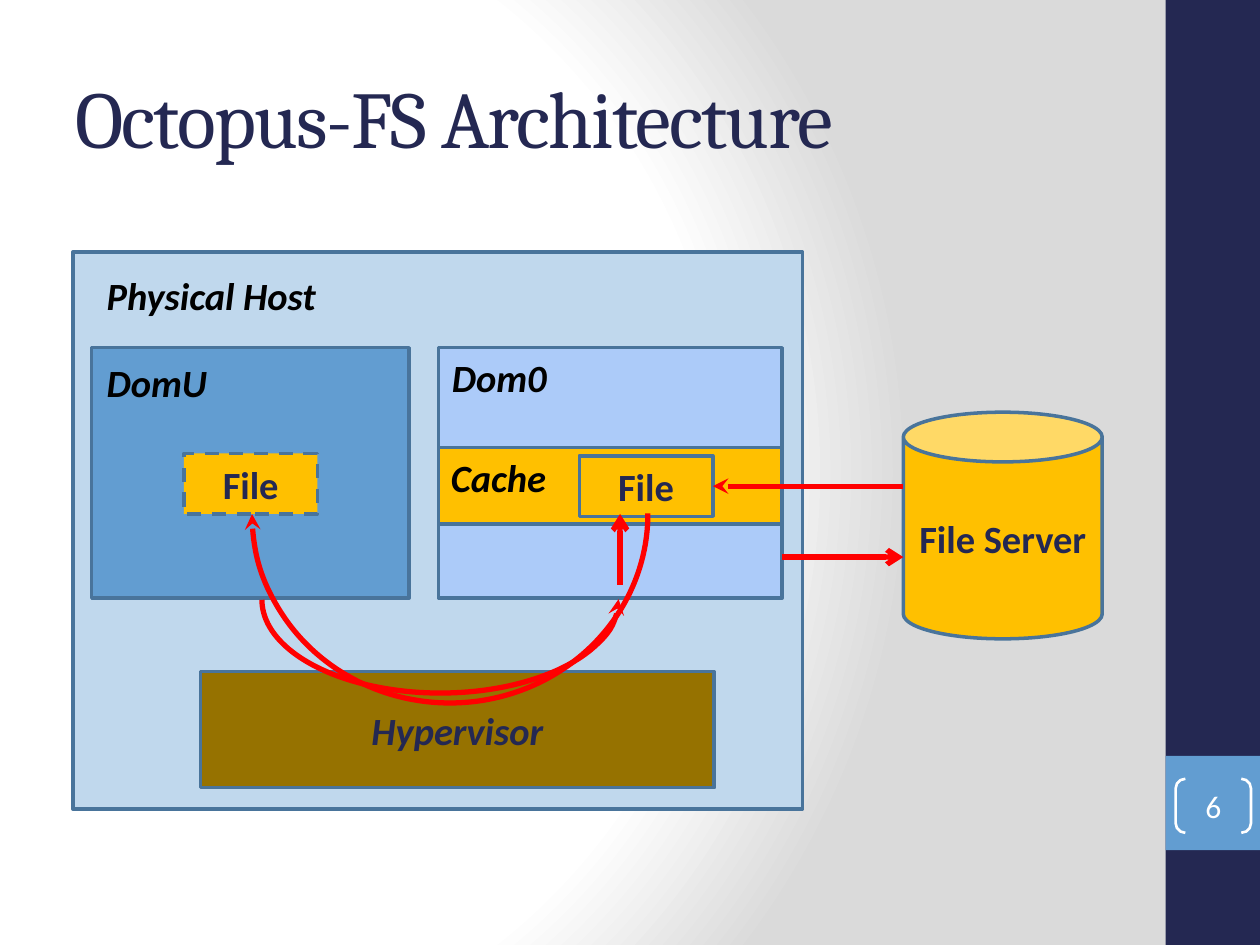
from pptx import Presentation
from pptx import util as u
from pptx.dml.color import RGBColor
from pptx.enum import dml, shapes, text
from pptx.oxml import parse_xml
from pptx.oxml.ns import nsdecls, qn

NAVY, BLUE, GOLD, EDGE, RED = "242852", "629DD1", "FFC000", "49749B", "FF0000"
WHITE, BLACK = "FFFFFF", "000000"
KIND = shapes.MSO_SHAPE
SLIDE_SIZE = (25.4, 19.05)

# Text formats
TITLE = dict(name="Cambria", size=u.Pt(46), color=NAVY)
LABEL = dict(name="Calibri", size=u.Pt(22), bold=True, italic=True, color=BLACK)
HYPERVISOR = dict(LABEL, color=NAVY)
BOX = dict(HYPERVISOR, italic=False)
NUMBER = dict(name="Calibri", size=u.Pt(18), color=WHITE)

# Shared measures in cm
BAR_LEFT, BAR_WIDTH = 23.5, 1.9
DOMAIN_TOP, DOMAIN_HEIGHT = 7.01, 5.05
DOM0_LEFT, DOM0_WIDTH = 8.84, 6.93
DOM0_RIGHT = DOM0_LEFT + DOM0_WIDTH
SERVER_LEFT = 18.21
FILE_SIZE = (2.69, 1.22)
LABEL_HEIGHT = 1.19

# Name, kind, (left, top, width, height), fill, line, text, format
PARTS = [
    ("side bar", KIND.RECTANGLE, (BAR_LEFT, 0, BAR_WIDTH, 19.05), NAVY, None, "", BOX),
    ("number tile", KIND.RECTANGLE, (BAR_LEFT, 15.24, BAR_WIDTH, BAR_WIDTH), BLUE, None, "", BOX),
    ("physical host", KIND.RECTANGLE, (1.47, 5.08, 14.71, 11.23), "C0D8ED", EDGE, "", BOX),
    ("Dom0", KIND.RECTANGLE, (DOM0_LEFT, DOMAIN_TOP, DOM0_WIDTH, DOMAIN_HEIGHT),
     "ACCBF9", EDGE, "", BOX),
    ("DomU", KIND.RECTANGLE, (1.85, DOMAIN_TOP, 6.4, DOMAIN_HEIGHT), BLUE, EDGE, "", BOX),
    ("hypervisor", KIND.RECTANGLE, (4.04, 13.54, 10.36, 2.34),
     "967200", EDGE, "Hypervisor", HYPERVISOR),
    ("file server", KIND.CAN, (SERVER_LEFT, 8.31, 4.01, 4.57), GOLD, EDGE, "File Server", BOX),
    ("cache", KIND.RECTANGLE, (DOM0_LEFT, 9.02, DOM0_WIDTH, 1.55), GOLD, EDGE, "", BOX),
    ("DomU file", KIND.RECTANGLE, (3.71, 9.14, *FILE_SIZE), GOLD, EDGE, "File", BOX),
    ("cached file", KIND.RECTANGLE, (11.68, 9.19, *FILE_SIZE), GOLD, EDGE, "File", BOX),
    ("page number", KIND.DOUBLE_BRACKET, (23.7, 15.7, 1.52, 1.09), None, WHITE, "6", NUMBER),
]
LABELS = [
    ("Physical Host", (1.9, 5.36, 6.3)),
    ("DomU", (1.9, 7.11, 3.18)),
    ("Dom0", (8.86, DOMAIN_TOP, 3.18)),
    ("Cache", (DOM0_LEFT, 9.02, 2.54)),
]
# Start, end, arrow end, arrow type, part joined at the start
ARROWS = [
    ((12.5, 11.79), (12.5, 10.36), "tailEnd", "arrow", None),
    ((DOM0_RIGHT, 11.23), (SERVER_LEFT, 11.23), "tailEnd", "arrow", None),
    ((14.37, 9.8), (SERVER_LEFT, 9.8), "headEnd", "stealth", "cached file"),
]
# Box of the whole ellipse, arrow end
ARCS = [
    ((5.28, 10.21, 7.19, 3.76), "headEnd"),
    ((5.08, 6.55, 7.98, 7.62), "tailEnd"),
]


def cm(values):
    return [u.Cm(value) for value in values]


def rgb(value):
    return RGBColor.from_string(value)


def write(shape, words, style, align, anchor):
    frame = shape.text_frame
    frame.word_wrap = True
    frame.vertical_anchor = anchor
    paragraph = frame.paragraphs[0]
    paragraph.alignment = align
    run = paragraph.add_run()
    run.text = words
    for key, value in style.items():
        if key == "color":
            run.font.color.rgb = rgb(value)
        else:
            setattr(run.font, key, value)
    return run


def set_line(shape, color, width):
    shape.line.color.rgb = rgb(color)
    shape.line.width = u.Pt(width)


def add_part(slide, kind, box, fill, line, width=2):
    shape = slide.shapes.add_shape(kind, *cm(box))
    shape.shadow.inherit = False
    if fill:
        shape.fill.solid()
        shape.fill.fore_color.rgb = rgb(fill)
    else:
        shape.fill.background()
    if line:
        set_line(shape, line, width)
    else:
        shape.line.fill.background()
    return shape


def add_head(shape, end, kind):
    shape.line._get_or_add_ln().append(
        parse_xml(f'<a:{end} {nsdecls("a")} type="{kind}"/>'))


def set_background(slide):
    slide.background.fill.gradient()
    old = slide.element.find(".//" + qn("a:gradFill"))
    stops = "".join(
        f'<a:gs pos="{place * 1000}"><a:srgbClr val="{color}"/></a:gs>'
        for place, color in [(0, WHITE), (75, WHITE), (100, "DADADA")])
    old.getparent().replace(old, parse_xml(
        f'<a:gradFill {nsdecls("a")} rotWithShape="1"><a:gsLst>{stops}</a:gsLst>'
        '<a:path path="circle"><a:fillToRect l="20000" t="50000" r="100000" b="50000"/>'
        '</a:path></a:gradFill>'))


def main():
    presentation = Presentation()
    presentation.slide_width, presentation.slide_height = cm(SLIDE_SIZE)
    slide = presentation.slides.add_slide(presentation.slide_layouts[6])
    set_background(slide)

    # Title
    title = slide.shapes.add_textbox(*cm((1.27, 0.76, 21.16, 3.18)))
    run = write(title, "Octopus-FS Architecture", TITLE,
                text.PP_ALIGN.LEFT, text.MSO_ANCHOR.MIDDLE)
    run.font._element.set("spc", "-100")

    # Boxes, file server and page number
    parts = {}
    for name, kind, box, fill, line, words, style in PARTS:
        parts[name] = shape = add_part(slide, kind, box, fill, line)
        if words:
            write(shape, words, style, text.PP_ALIGN.CENTER, text.MSO_ANCHOR.MIDDLE)
    parts["DomU file"].line.dash_style = dml.MSO_LINE.DASH
    number = parts["page number"]
    number.line.width = u.Pt(1.5)
    number.adjustments[0] = 0.18
    for side in ("left", "top", "right", "bottom"):
        setattr(number.text_frame, f"margin_{side}", 0)

    # Labels
    for words, box in LABELS:
        label = slide.shapes.add_textbox(*cm((*box, LABEL_HEIGHT)))
        write(label, words, LABEL, text.PP_ALIGN.LEFT, text.MSO_ANCHOR.TOP)
        label.text_frame.auto_size = text.MSO_AUTO_SIZE.SHAPE_TO_FIT_TEXT

    # Straight arrows
    for start, finish, end, kind, joined in ARROWS:
        arrow = slide.shapes.add_connector(
            shapes.MSO_CONNECTOR.STRAIGHT, *cm(start + finish))
        set_line(arrow, RED, 3)
        add_head(arrow, end, kind)
        arrow._element.spPr.append(parse_xml(f'<a:effectLst {nsdecls("a")}/>'))
        if joined:
            arrow.begin_connect(parts[joined], 3)

    # Curved arrows through the hypervisor
    for box, end in ARCS:
        arc = add_part(slide, KIND.ARC, box, None, RED, 3)
        arc.rotation = 180
        arc.adjustments[0], arc.adjustments[1] = 107.88, 0
        add_head(arc, end, "stealth")

    presentation.save("out.pptx")


if __name__ == "__main__":
    main()
